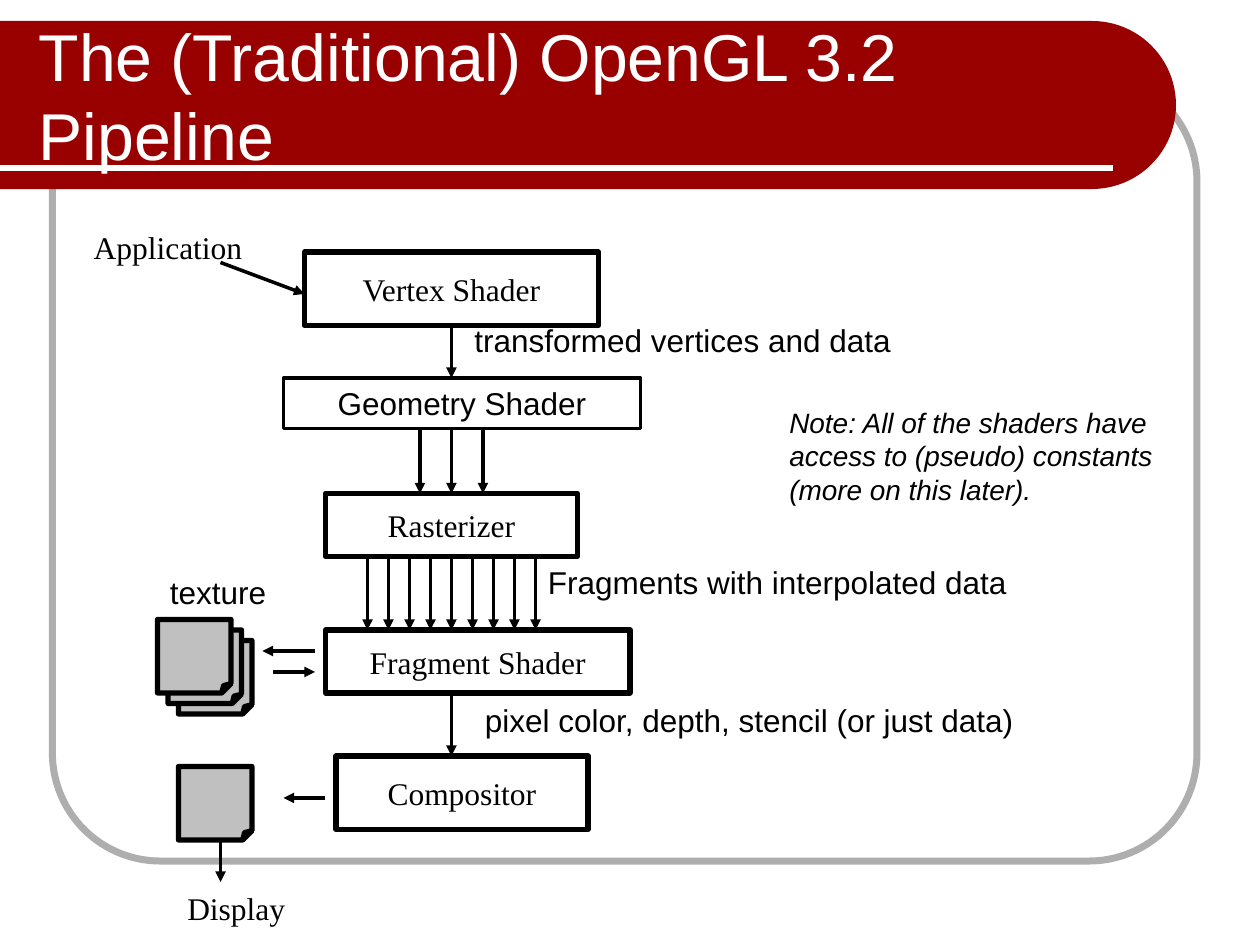
from math import cos, pi, sin
from pptx import Presentation
from pptx.dml.color import RGBColor
from pptx.enum.shapes import MSO_CONNECTOR as Link, MSO_SHAPE as Preset
from pptx.enum.text import MSO_ANCHOR as Anchor, PP_ALIGN as Align
from pptx.oxml import parse_xml
from pptx.oxml.ns import nsdecls, qn
from pptx.util import Inches, Pt


class Theme:
    red, white, black = (RGBColor.from_string(c) for c in ("990000", "FFFFFF", "000000"))
    frame, paper = (RGBColor.from_string(c) for c in ("AEAEAE", "C0C0C0"))
    sans, serif = "Arial", "Times New Roman"
    title, label, note = Pt(37.8), Pt(18), Pt(16)
    thin, rule, thick = Pt(2), Pt(3), Pt(4)


deck = Presentation()
deck.slide_width, deck.slide_height = Inches(10), Inches(7.5)
slide = deck.slides.add_slide(deck.slide_layouts[6])
shapes = slide.shapes

# The slide is a grid of 120 columns by 90 rows of square cells
CELL = deck.slide_width / 120


def grid(*cells):
    return [round(n * CELL) for n in cells]


def write(shape, text, font=Theme.sans, size=Theme.label, color=Theme.black,
          align=Align.LEFT, anchor=Anchor.TOP, wrap=True, italic=False):
    frame = shape.text_frame
    frame.word_wrap, frame.vertical_anchor = wrap, anchor
    paragraph = frame.paragraphs[0]
    paragraph.alignment = align
    run = paragraph.add_run()
    run.text = text
    run.font.name, run.font.size, run.font.italic = font, size, italic
    run.font.color.rgb = color


# Rounded page frame
border = shapes.add_shape(Preset.ROUNDED_RECTANGLE, *grid(5, 7, 109, 75))
border.adjustments[0] = 0.137
border.shadow.inherit = False
border.fill.background()
border.line.color.rgb, border.line.width = Theme.frame, Theme.thick

# Title band with a half-round right end
radius, mid_col, mid_row = 8, 104, 10
bend = [(mid_col + radius * sin(pi * i / 48), mid_row - radius * cos(pi * i / 48))
        for i in range(49)]
outline = shapes.build_freeform(0, round(2 * CELL))
outline.add_line_segments([grid(*point) for point in bend + [(0, 18)]], close=True)
band = outline.convert_to_shape()
band.shadow.inherit = False
band.fill.solid()
band.fill.fore_color.rgb = Theme.red
band.line.fill.background()

# Title and its underline
underline = shapes.add_connector(Link.STRAIGHT, *grid(0, 16, 106, 16))
underline.line.color.rgb, underline.line.width = Theme.white, Theme.rule
underline._element.spPr.append(parse_xml(f"<a:effectLst {nsdecls('a')}/>"))
write(shapes.add_textbox(*grid(2.5, 3, 93.5, 12)), "The (Traditional) OpenGL 3.2 Pipeline",
      size=Theme.title, color=Theme.white, anchor=Anchor.MIDDLE)

# Pipeline stages: place, outline, font
stages = {}
for name, place, width, font in [
    ("Vertex Shader", (29, 24, 28, 7), Theme.rule, Theme.serif),
    ("Geometry Shader", (27, 36, 34, 4.8), Theme.thin, Theme.sans),
    ("Rasterizer", (31, 47, 24, 6), Theme.rule, Theme.serif),
    ("Fragment Shader", (31, 60, 29, 6), Theme.rule, Theme.serif),
    ("Compositor", (32, 72, 24, 7), Theme.rule, Theme.serif),
]:
    stage = stages[name] = shapes.add_shape(Preset.RECTANGLE, *grid(*place))
    stage.shadow.inherit = False
    stage.fill.solid()
    stage.fill.fore_color.rgb = Theme.white
    stage.line.color.rgb, stage.line.width = Theme.black, width
    write(stage, name, font, align=Align.CENTER, anchor=Anchor.MIDDLE, wrap=False)

# Texture stack, back to front, then the display buffer
for col, row in [(17, 61), (16, 60), (15, 59), (17, 73)]:
    sheet = shapes.add_shape(Preset.FOLDED_CORNER, *grid(col, row, 7, 7))
    fold = parse_xml(f"<a:gd {nsdecls('a')} name='adj' fmla='val 12500'/>")
    sheet._element.spPr.find(qn("a:prstGeom")).get_or_add_avLst().append(fold)
    sheet.shadow.inherit = False
    sheet.fill.solid()
    sheet.fill.fore_color.rgb = Theme.paper
    sheet.line.color.rgb, sheet.line.width = Theme.black, Theme.rule

# Arrows: single flows, three primitives, nine fragments
spine = 43
flows = [(21, 25, 29, 28), (spine, 31, spine, 36), (spine, 66, spine, 72),
         (30, 62, 25, 62), (26, 64, 30, 64), (31, 76, 27, 76), (21, 80, 21, 84)]
flows += [(spine + 3 * i, 41, spine + 3 * i, 47) for i in range(-1, 2)]
flows += [(spine + 2 * i, 53, spine + 2 * i, 60) for i in range(-4, 5)]
for flow in flows:
    arrow = shapes.add_connector(Link.STRAIGHT, *grid(*flow))
    arrow.line.color.rgb, arrow.line.width = Theme.black, Theme.thin
    arrow._element.spPr.find(qn("a:ln")).append(
        parse_xml(f"<a:tailEnd {nsdecls('a')} type='triangle'/>"))
    arrow._element.spPr.append(parse_xml(f"<a:effectLst {nsdecls('a')}/>"))
    if flow[:2] == (spine, 31):
        arrow.begin_connect(stages["Vertex Shader"], 2)
    elif flow[2:] == (spine, 47):
        arrow.end_connect(stages["Rasterizer"], 0)
    elif flow[:2] == (spine, 53):
        arrow.begin_connect(stages["Rasterizer"], 2)

# Endpoints of the pipeline
for name, place in [("Application", (6, 20, 20, 7)), ("Display", (15, 83, 15, 7))]:
    write(shapes.add_textbox(*grid(*place)), name, Theme.serif,
          align=Align.CENTER, anchor=Anchor.MIDDLE, wrap=False)

# Data passed between stages
for data, place in [
    ("transformed vertices and data", (44, 30, 59, 4.8)),
    ("Fragments with interpolated data", (51, 53, 47, 4.8)),
    ("pixel color, depth, stencil (or just data)", (45, 66.2, 59, 4.8)),
    ("texture", (15, 54, 12, 4.8)),
]:
    write(shapes.add_textbox(*grid(*place)), data)

# Side note
write(shapes.add_textbox(*grid(74, 38, 41, 11)),
      "Note: All of the shaders have access to (pseudo) constants (more on this later).",
      size=Theme.note, italic=True)

deck.save("out.pptx")
